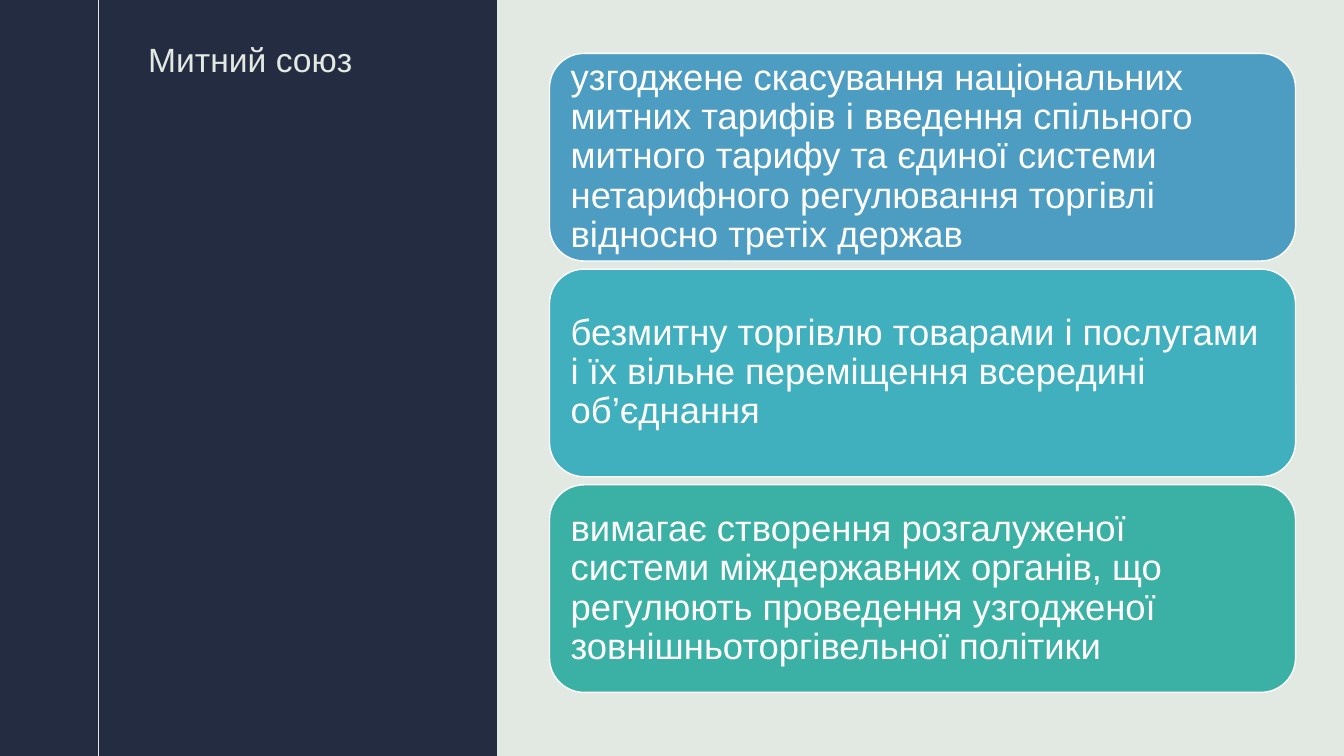
from lxml import etree
from pptx import Presentation
from pptx.dml.color import RGBColor
from pptx.enum.shapes import MSO_CONNECTOR, MSO_SHAPE
from pptx.enum.text import MSO_ANCHOR, PP_ALIGN
from pptx.oxml.ns import qn
from pptx.util import Inches, Pt

NAVY = RGBColor(0x24, 0x2C, 0x41)
PALE = RGBColor(0xE2, 0xE8, 0xE2)
WHITE = RGBColor(0xFF, 0xFF, 0xFF)
BLUE = RGBColor(0x4D, 0x9D, 0xC3)
TURQUOISE = RGBColor(0x40, 0xB0, 0xBE)
GREEN = RGBColor(0x3B, 0xB1, 0xA6)

SLIDE_WIDTH, SLIDE_HEIGHT = 13.33, 7.5
TITLE = "Митний союз"
FEATURES = [
    (BLUE, "узгоджене скасування національних митних тарифів і введення "
           "спільного митного тарифу та єдиної системи нетарифного "
           "регулювання торгівлі відносно третіх держав"),
    (TURQUOISE, "безмитну торгівлю товарами і послугами і їх вільне "
                "переміщення всередині об’єднання"),
    (GREEN, "вимагає створення розгалуженої системи міждержавних органів, "
            "що регулюють проведення узгодженої зовнішньоторгівельної політики"),
]


def add_box(slide, kind, left, top, width, height, fill):
    shape = slide.shapes.add_shape(
        kind, Inches(left), Inches(top), Inches(width), Inches(height))
    shape.shadow.inherit = False
    shape.fill.solid()
    shape.fill.fore_color.rgb = fill
    return shape


def write_text(shape, text, size, color, inset, anchor):
    frame = shape.text_frame
    frame.word_wrap = True
    frame.vertical_anchor = anchor
    frame.margin_left = frame.margin_right = Inches(inset)
    frame.margin_top = frame.margin_bottom = Inches(inset)
    paragraph = frame.paragraphs[0]
    paragraph.alignment = PP_ALIGN.LEFT
    run = paragraph.add_run()
    run.text = text
    run.font.name = "Arial"
    run.font.size = Pt(size)
    run.font.color.rgb = color
    return paragraph


def add_title_panel(slide, left, top, width, height):
    panel = add_box(slide, MSO_SHAPE.RECTANGLE, left, top, width, height, NAVY)
    panel.line.fill.background()

    title = slide.shapes.add_textbox(
        Inches(left + 1.47), Inches(top + 0.39), Inches(2.98), Inches(height - 0.84))
    write_text(title, TITLE, 24, PALE, 0, MSO_ANCHOR.TOP)

    rule_x = Inches(left + 0.98)
    rule = slide.shapes.add_connector(
        MSO_CONNECTOR.STRAIGHT, rule_x, Inches(top), rule_x, Inches(top + height))
    rule.line.color.rgb = PALE
    rule.line.width = Pt(0.75)
    etree.SubElement(rule._element.spPr, qn("a:effectLst"))


def add_feature_cards(slide, left, top, width, height, gap=0.08):
    """Stack equal cards so that they fill the given box."""
    card_height = (height - gap * (len(FEATURES) - 1)) / len(FEATURES)
    for index, (fill, text) in enumerate(FEATURES):
        card = add_box(slide, MSO_SHAPE.ROUNDED_RECTANGLE, left,
                       top + index * (card_height + gap), width, card_height, fill)
        card.line.color.rgb = WHITE
        card.line.width = Pt(1)
        paragraph = write_text(card, text, 26, WHITE, 0.11, MSO_ANCHOR.MIDDLE)
        paragraph.line_spacing = 0.9


def main():
    presentation = Presentation()
    presentation.slide_width = Inches(SLIDE_WIDTH)
    presentation.slide_height = Inches(SLIDE_HEIGHT)
    slide = presentation.slides.add_slide(presentation.slide_layouts[6])
    slide.background.fill.solid()
    slide.background.fill.fore_color.rgb = PALE
    add_title_panel(slide, 0, 0, 4.93, SLIDE_HEIGHT)
    add_feature_cards(slide, 5.45, 0.53, 7.4, 6.34)
    presentation.save("out.pptx")


if __name__ == "__main__":
    main()
